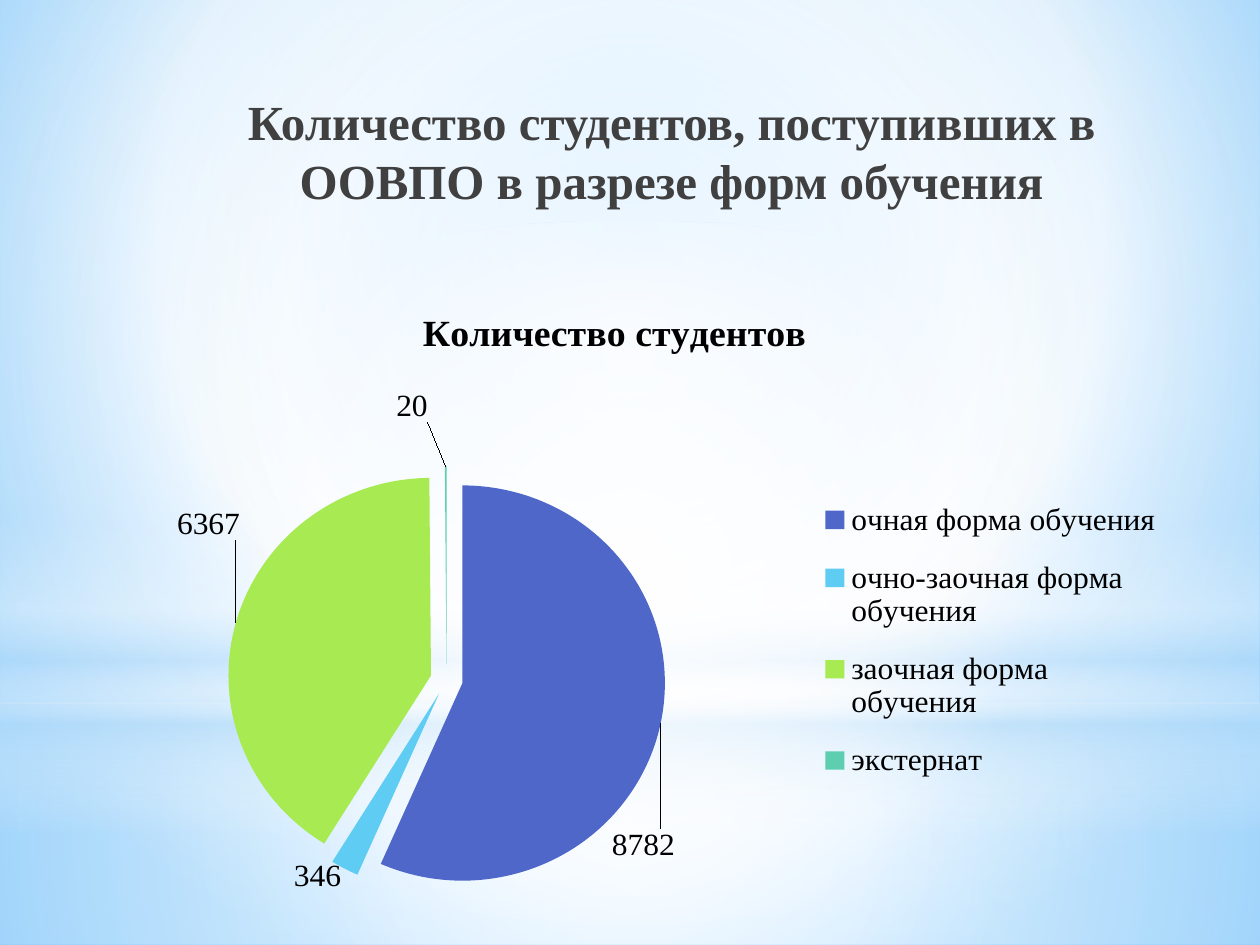
from lxml import etree
from pptx import Presentation
from pptx.chart import data as chart_data
from pptx.dml.color import RGBColor
from pptx.enum import chart as ce, shapes, text
from pptx.oxml import ns, parse_xml
from pptx.util import Inches, Pt

SERIF = "Times New Roman"
BLACK = RGBColor(0, 0, 0)
DARK_GRAY = RGBColor(0x40, 0x40, 0x40)
WHITE = RGBColor(0xFF, 0xFF, 0xFF)
PALE_BLUE = RGBColor(0xB4, 0xDC, 0xFA)
SKY = RGBColor(0x9E, 0xD5, 0xFF)
AZURE = RGBColor(0x5B, 0xB9, 0xFF)
SLICE_COLORS = (
    RGBColor(0x4E, 0x67, 0xC8),
    RGBColor(0x5E, 0xCC, 0xF3),
    RGBColor(0xA7, 0xEA, 0x52),
    RGBColor(0x5D, 0xCE, 0xAF),
)
STUDENTS = {
    "очная форма обучения": 8782,
    "очно-заочная форма обучения": 346,
    "заочная форма обучения": 6367,
    "экстернат": 20,
}
LABEL_SHIFTS = {0: (-0.05, 0.17), 2: (0.01, -0.13), 3: (-0.03, -0.06)}


def gradient(stops, center=None, angle=0):
    """Return a gradient fill of (position, color, opacity) stops, round if a center is given."""
    fill = parse_xml(f'<a:gradFill {ns.nsdecls("a")} rotWithShape="1"><a:gsLst/></a:gradFill>')
    for position, color, opacity in stops:
        stop = etree.SubElement(fill[0], ns.qn("a:gs"), pos=str(position * 1000))
        tone = etree.SubElement(stop, ns.qn("a:srgbClr"), val=str(color))
        if opacity < 100:
            etree.SubElement(tone, ns.qn("a:alpha"), val=str(opacity * 1000))
    if center:
        path = etree.SubElement(fill, ns.qn("a:path"), path="circle")
        sides = {side: str(share * 1000) for side, share in zip("ltrb", center)}
        etree.SubElement(path, ns.qn("a:fillToRect"), **sides)
    else:
        etree.SubElement(fill, ns.qn("a:lin"), ang=str(angle * 60000), scaled="0")
    return fill


def swap_fill(parent, fill):
    """Replace the solid fill inside the parent element with another fill."""
    solid = parent.find(".//" + ns.qn("a:solidFill"))
    solid.getparent().replace(solid, fill)


def add_backdrop(page, width):
    """Fill the background and lay the translucent bands and glow over it."""
    page.background.fill.solid()
    page.background.fill.fore_color.rgb = WHITE
    swap_fill(page.element.find(".//" + ns.qn("p:bgPr")), gradient(
        [(0, SKY, 100), (60, WHITE, 100), (100, AZURE, 100)], (20, 10, 20, 60)))
    middle = (50, 50, 50, 50)
    rectangle, oval = shapes.MSO_SHAPE.RECTANGLE, shapes.MSO_SHAPE.OVAL
    layers = (
        (rectangle, 5.58, 1.92, gradient(
            [(0, WHITE, 91), (37, WHITE, 76), (100, PALE_BLUE, 79)], middle)),
        (rectangle, 0, 5.58, gradient(
            [(0, WHITE, 89), (48, WHITE, 62), (100, PALE_BLUE, 79)], middle)),
        (rectangle, 4.12, 2.5, gradient(
            [(0, WHITE, 0), (29, WHITE, 30), (45, PALE_BLUE, 40), (55, WHITE, 26),
             (65, PALE_BLUE, 60), (100, WHITE, 0)], angle=90)),
        (oval, 1.75, 5.58, gradient([(0, WHITE, 100), (56, WHITE, 0)], middle)),
    )
    for kind, top, height, fill in layers:
        layer = page.shapes.add_shape(kind, 0, Inches(top), width, Inches(height))
        layer.shadow.inherit = False
        layer.line.fill.background()
        layer.fill.solid()
        layer.fill.fore_color.rgb = WHITE
        swap_fill(layer.element.spPr, fill)


def add_title(page, left, top, width, height):
    """Place the heading in the title placeholder, in front of the backdrop."""
    title = page.shapes.title
    title.left, title.top, title.width, title.height = left, top, width, height
    page.shapes.element.append(title.element)
    frame = title.text_frame
    frame.word_wrap = True
    frame.auto_size = text.MSO_AUTO_SIZE.NONE
    frame.vertical_anchor = text.MSO_ANCHOR.TOP
    para = frame.paragraphs[0]
    para.text = "Количество студентов, поступивших в ООВПО в разрезе форм обучения"
    para.alignment = text.PP_ALIGN.CENTER
    para.line_spacing = 1.0
    para.font.name, para.font.size, para.font.bold = SERIF, Pt(28), True
    para.font.color.rgb = DARK_GRAY


def manual_layout(target=None, edge=True, **places):
    """Return a chart layout holding the given x, y, w and h shares."""
    layout = parse_xml(f'<c:layout {ns.nsdecls("c")}><c:manualLayout/></c:layout>')
    settings = {"layoutTarget": target} if target else {}
    if edge:
        settings.update(xMode="edge", yMode="edge")
    settings.update(places)
    for name, value in settings.items():
        etree.SubElement(layout[0], ns.qn("c:" + name), val=str(value))
    return layout


def place(element, layout, index):
    """Put a layout at the given index of a chart element, replacing any old one."""
    for old in element.findall(ns.qn("c:layout")):
        element.remove(old)
    element.insert(index, layout)


def add_student_pie(page, left, top, width, height):
    """Draw the exploded pie of students by form of study with its legend."""
    heading = "Количество студентов"
    data = chart_data.CategoryChartData()
    data.categories = list(STUDENTS)
    data.add_series(heading, list(STUDENTS.values()))
    chart = page.shapes.add_chart(
        ce.XL_CHART_TYPE.PIE, left, top, width, height, data).chart
    chart.font.name, chart.font.size = SERIF, Pt(18)
    chart.font.color.rgb = BLACK

    chart.has_title = True
    chart.chart_title.include_in_layout = False
    para = chart.chart_title.text_frame.paragraphs[0]
    para.text = heading
    para.font.name, para.font.size, para.font.bold = SERIF, Pt(21.6), True
    para.font.color.rgb = BLACK

    chart.has_legend = True
    chart.legend.position = ce.XL_LEGEND_POSITION.RIGHT
    chart.legend.include_in_layout = False
    chart.legend.font.name, chart.legend.font.size = SERIF, Pt(18)
    place(chart.legend._element, manual_layout(x=0.68, y=0.32, w=0.31, h=0.53), 1)

    plot = chart.plots[0]
    plot.vary_by_categories = True
    series = plot.series[0]
    labels = series.data_labels
    labels.show_value = True
    labels.position = ce.XL_LABEL_POSITION.OUTSIDE_END
    labels.font.name, labels.font.size = SERIF, Pt(18)
    for index, color in enumerate(SLICE_COLORS):
        point = series.points[index]
        point.format.fill.solid()
        point.format.fill.fore_color.rgb = color
        if index in LABEL_SHIFTS:
            point.data_label.font.name = SERIF
            point.data_label.font.size = Pt(18)
            point.data_label.position = ce.XL_LABEL_POSITION.OUTSIDE_END

    root = chart.element
    place(root.find(".//" + ns.qn("c:plotArea")),
          manual_layout("inner", x=0.06, y=0.3, w=0.58, h=0.7), 0)
    for label, (x, y) in zip(root.iter(ns.qn("c:dLbl")), LABEL_SHIFTS.values()):
        place(label, manual_layout(edge=False, x=x, y=y), 1)
    explosion = parse_xml(f'<c:explosion {ns.nsdecls("c")} val="8"/>')
    root.find(".//" + ns.qn("c:dPt")).addprevious(explosion)


def main():
    """Build the slide and save it."""
    deck = Presentation()
    deck.slide_width, deck.slide_height = Inches(10), Inches(7.5)
    page = deck.slides.add_slide(deck.slide_layouts[5])
    add_backdrop(page, deck.slide_width)
    add_title(page, Inches(1.77), Inches(0.68), Inches(7.12), Inches(1.25))
    add_student_pie(page, Inches(0.43), Inches(2.25), Inches(8.9), Inches(4.96))
    deck.save("out.pptx")


if __name__ == "__main__":
    main()
